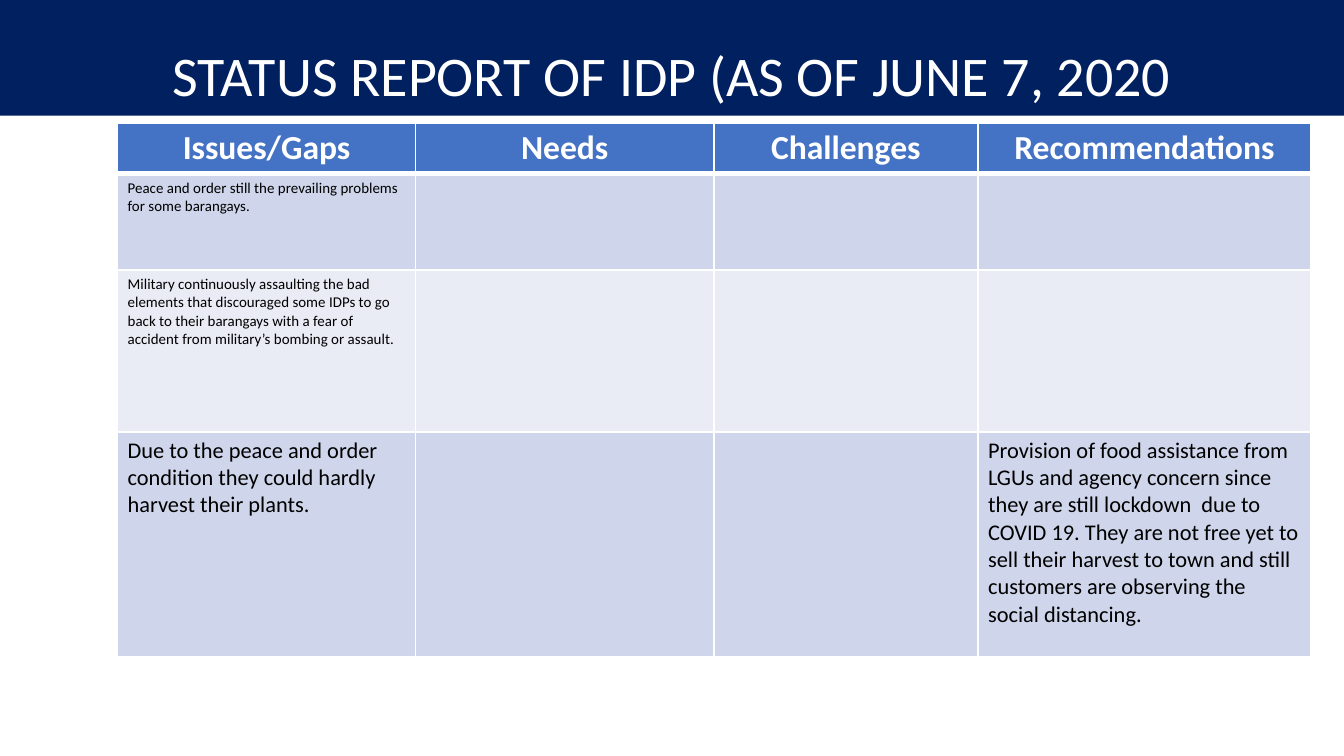
from dataclasses import dataclass

import pptx
import pptx.dml.color
import pptx.enum.text
import pptx.oxml
import pptx.oxml.ns
import pptx.util

Pt = pptx.util.Pt
Align = pptx.enum.text.PP_ALIGN
Anchor = pptx.enum.text.MSO_ANCHOR


@dataclass(frozen=True)
class Theme:
    """Hold the colours, font and type sizes."""
    navy: str = "002060"
    blue: str = "4472C4"
    bands: tuple = ("CFD5EA", "E9EBF5")
    white: str = "FFFFFF"
    black: str = "000000"
    font: str = "Calibri"
    title: float = 30
    head: float = 18
    body: float = 12
    small: float = 8


THEME = Theme()
HEADS = ("Issues/Gaps", "Needs", "Challenges", "Recommendations")
ROWS = (
    (THEME.small, ("Peace and order still the prevailing problems for some barangays.", "", "", "")),
    (THEME.small, ("Military continuously assaulting the bad elements that discouraged some "
                   "IDPs to go back to their barangays with a fear of accident from "
                   "military’s bombing or assault.", "", "", "")),
    (THEME.body, ("Due to the peace and order condition they could hardly harvest their plants.",
                  "", "",
                  "Provision of food assistance from LGUs and agency concern since they are "
                  "still lockdown  due to COVID 19. They are not free yet to sell their harvest "
                  "to town and still customers are observing the social distancing.")),
)
WIDTHS = (159.7, 159.7, 141.6, 178.3)
HEIGHTS = (26.8, 51.6, 86.6, 120.4)


def tint(fill, color):
    """Give a fill one solid colour."""
    fill.solid()
    fill.fore_color.rgb = pptx.dml.color.RGBColor.from_string(color)


def style(frame, size, color, align, bold=False):
    """Format every paragraph and run of a text frame."""
    for para in frame.paragraphs:
        para.alignment = align
        for run in para.runs:
            run.font.name = THEME.font
            run.font.size = Pt(size)
            run.font.bold = bold
            run.font.color.rgb = pptx.dml.color.RGBColor.from_string(color)


def border(cell, base):
    """Draw the four sides of a cell, with its own base width."""
    props = cell._tc.get_or_add_tcPr()
    sides = (("L", 1), ("R", 1), ("T", 1), ("B", base))
    for spot, (side, width) in enumerate(sides):
        line = pptx.oxml.parse_xml(
            f'<a:ln{side} {pptx.oxml.ns.nsdecls("a")} w="{Pt(width)}">'
            f'<a:solidFill><a:srgbClr val="{THEME.white}"/></a:solidFill></a:ln{side}>')
        props.insert(spot, line)


def put(cell, text, size, color, fill, align=Align.LEFT, bold=False, base=1):
    """Fill one table cell with text and style."""
    cell.margin_left = cell.margin_right = Pt(5.4)
    cell.margin_top = cell.margin_bottom = Pt(2.7)
    tint(cell.fill, fill)
    border(cell, base)
    if text:
        cell.text_frame.text = text
        style(cell.text_frame, size, color, align, bold)


def banner(slide, left, top, width, height):
    """Place the title on a solid band."""
    title = slide.shapes.title
    title.left, title.top = Pt(left), Pt(top)
    title.width, title.height = Pt(width), Pt(height)
    tint(title.fill, THEME.navy)
    frame = title.text_frame
    frame.text = "STATUS REPORT OF IDP (AS OF JUNE 7, 2020"
    frame.auto_size = pptx.enum.text.MSO_AUTO_SIZE.NONE
    frame.vertical_anchor = Anchor.BOTTOM
    frame.paragraphs[0].line_spacing = 0.9
    style(frame, THEME.title, THEME.white, Align.CENTER)


def report(slide, left, top, width, height):
    """Place the status table, scaled to its box."""
    grid = slide.shapes.add_table(len(ROWS) + 1, len(HEADS), Pt(left), Pt(top),
                                  Pt(width), Pt(height)).table
    for col, part in zip(grid.columns, WIDTHS):
        col.width = Pt(width * part / sum(WIDTHS))
    for row, part in zip(grid.rows, HEIGHTS):
        row.height = Pt(height * part / sum(HEIGHTS))
    for col, text in enumerate(HEADS):
        put(grid.cell(0, col), text, THEME.head, THEME.white, THEME.blue,
            Align.CENTER, True, 3)
    for row, (size, texts) in enumerate(ROWS):
        for col, text in enumerate(texts):
            put(grid.cell(row + 1, col), text, size, THEME.black, THEME.bands[row % 2])


def main():
    """Build and save the slide."""
    deck = pptx.Presentation()
    deck.slide_width, deck.slide_height = Pt(720), Pt(405)
    slide = deck.slides.add_slide(deck.slide_layouts[5])
    banner(slide, 0, 0, 720, 62)
    report(slide, 63, 65.8, 639.3, 285.5)
    deck.save("out.pptx")


if __name__ == "__main__":
    main()
